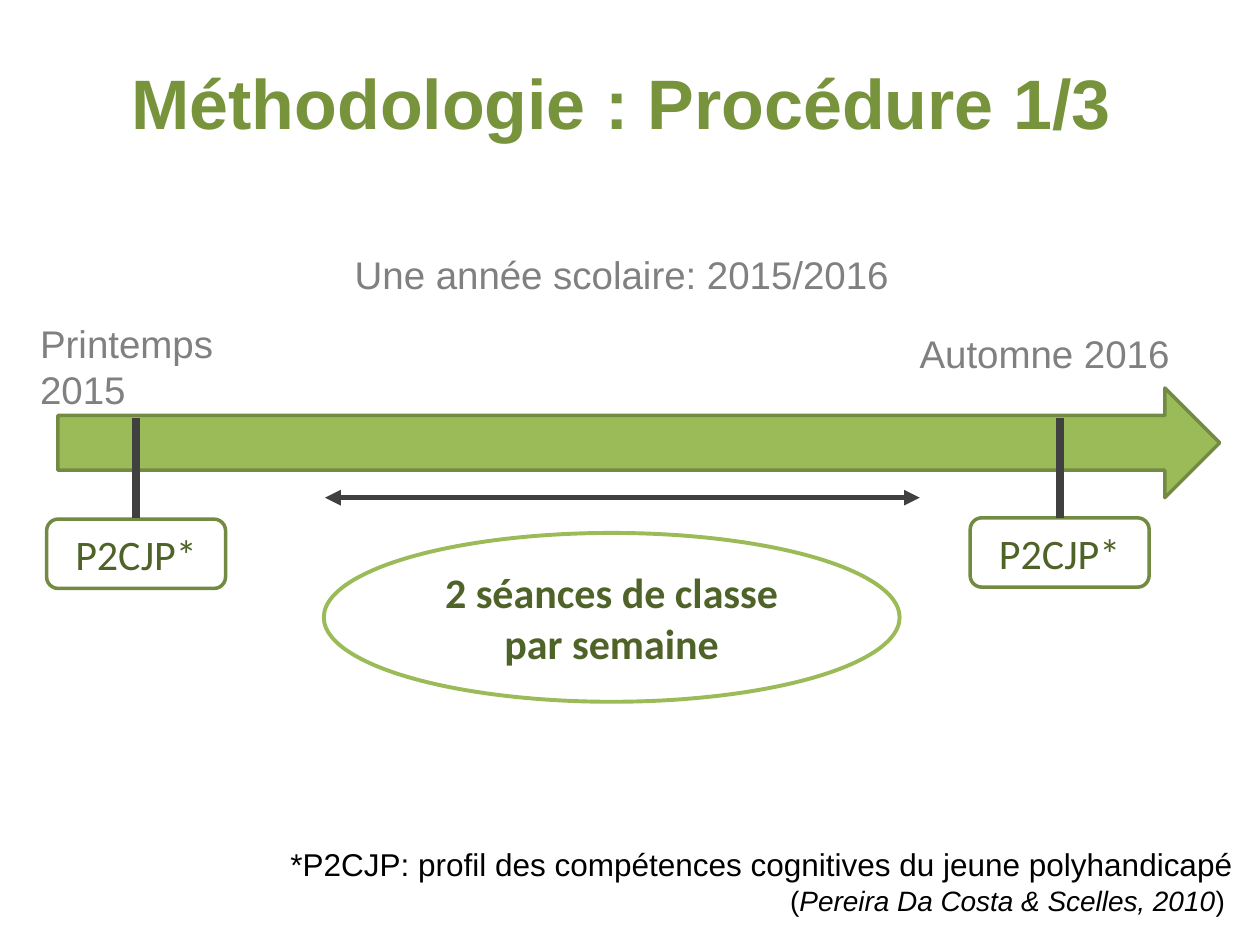
from lxml import etree
from pptx import Presentation
from pptx.dml.color import RGBColor
from pptx.enum.shapes import MSO_CONNECTOR, MSO_SHAPE
from pptx.enum.text import MSO_ANCHOR, PP_ALIGN
from pptx.oxml.ns import qn
from pptx.util import Inches, Pt

TITLE_GREEN = RGBColor(0x77, 0x93, 0x3C)
GREEN = RGBColor(0x9B, 0xBB, 0x59)
BORDER_GREEN = RGBColor(0x73, 0x8A, 0x42)
TEXT_GREEN = RGBColor(0x4F, 0x62, 0x28)
GRAY = RGBColor(0x80, 0x80, 0x80)
DARK_GRAY = RGBColor(0x40, 0x40, 0x40)
BLACK = RGBColor(0, 0, 0)
WHITE = RGBColor(0xFF, 0xFF, 0xFF)


def write_runs(text_frame, alignment, color, runs):
    text_frame.word_wrap = True
    paragraph = text_frame.paragraphs[0]
    paragraph.alignment = alignment
    for text, font_format in runs:
        run = paragraph.add_run()
        run.text = text
        run.font.color.rgb = color
        for name, value in font_format.items():
            setattr(run.font, name, value)


presentation = Presentation()
presentation.slide_width = Inches(10)
presentation.slide_height = Inches(7.5)
slide = presentation.slides.add_slide(presentation.slide_layouts[5])

title = slide.shapes.title
title_position = {"left": 0.43, "top": 0.18, "width": 9, "height": 1.25}
for name, value in title_position.items():
    setattr(title, name, Inches(value))
title.text_frame.vertical_anchor = MSO_ANCHOR.MIDDLE
title_format = {"name": "Arial", "size": Pt(40), "bold": True}
write_runs(title.text_frame, PP_ALIGN.CENTER, TITLE_GREEN,
           [("Méthodologie : Procédure 1/3", title_format)])

time_arrow = (MSO_SHAPE.RIGHT_ARROW, (0.46, 3.08, 9.22, 0.87), GREEN, BORDER_GREEN, 2, "", False)
assessments_and_sessions = [
    (MSO_SHAPE.ROUNDED_RECTANGLE, (0.37, 4.12, 1.42, 0.55), WHITE, BORDER_GREEN, 2, "P2CJP*", False),
    (MSO_SHAPE.ROUNDED_RECTANGLE, (7.7, 4.11, 1.42, 0.55), WHITE, BORDER_GREEN, 2, "P2CJP*", False),
    (MSO_SHAPE.OVAL, (2.57, 4.23, 4.57, 1.34), WHITE, GREEN, 2.25,
     "2 séances de classe par semaine", True),
]
for kind, position, fill, border, border_width, text, bold in [time_arrow, *assessments_and_sessions]:
    shape = slide.shapes.add_shape(kind, *map(Inches, position))
    shape.shadow.inherit = False
    shape.fill.solid()
    shape.fill.fore_color.rgb = fill
    shape.line.color.rgb = border
    shape.line.width = Pt(border_width)
    if text:
        shape.text_frame.vertical_anchor = MSO_ANCHOR.MIDDLE
        write_runs(shape.text_frame, PP_ALIGN.CENTER, TEXT_GREEN,
                   [(text, {"name": "Calibri", "size": Pt(24), "bold": bold})])

lines = [
    ((1.08, 3.32, 1.08, 4.11), 4.5, False),
    ((8.41, 3.32, 8.41, 4.11), 4.5, False),
    ((2.58, 3.95, 7.3, 3.95), 3, True),
]
for ends, width, has_arrowheads in lines:
    connector = slide.shapes.add_connector(MSO_CONNECTOR.STRAIGHT, *map(Inches, ends))
    connector.line.color.rgb = DARK_GRAY
    connector.line.width = Pt(width)
    if has_arrowheads:
        for tag in ("a:headEnd", "a:tailEnd"):
            etree.SubElement(connector.line._get_or_add_ln(), qn(tag), type="triangle")
    etree.SubElement(connector._element.spPr, qn("a:effectLst"))

label_format = {"name": "Arial", "size": Pt(22)}
note_format = {"name": "Arial", "size": Pt(18)}
citation_format = {"name": "Arial", "size": Pt(16)}
text_boxes = [
    ((2.57, 1.94, 4.73, 0.47), PP_ALIGN.CENTER, GRAY,
     [("Une année scolaire: 2015/2016", label_format)]),
    ((0.22, 2.49, 1.97, 0.84), PP_ALIGN.LEFT, GRAY, [("Printemps 2015", label_format)]),
    ((7.2, 2.57, 2.23, 0.47), PP_ALIGN.LEFT, GRAY, [("Automne 2016", label_format)]),
    ((1.79, 6.66, 8.09, 0.67), PP_ALIGN.RIGHT, BLACK, [
        ("*P2CJP: profil des compétences cognitives du jeune polyhandicapé ", note_format),
        ("(", citation_format),
        ("Pereira Da Costa & Scelles, 2010", {**citation_format, "italic": True}),
        (") ", citation_format),
    ]),
]
for position, alignment, color, runs in text_boxes:
    text_box = slide.shapes.add_textbox(*map(Inches, position))
    write_runs(text_box.text_frame, alignment, color, runs)

presentation.save("out.pptx")
